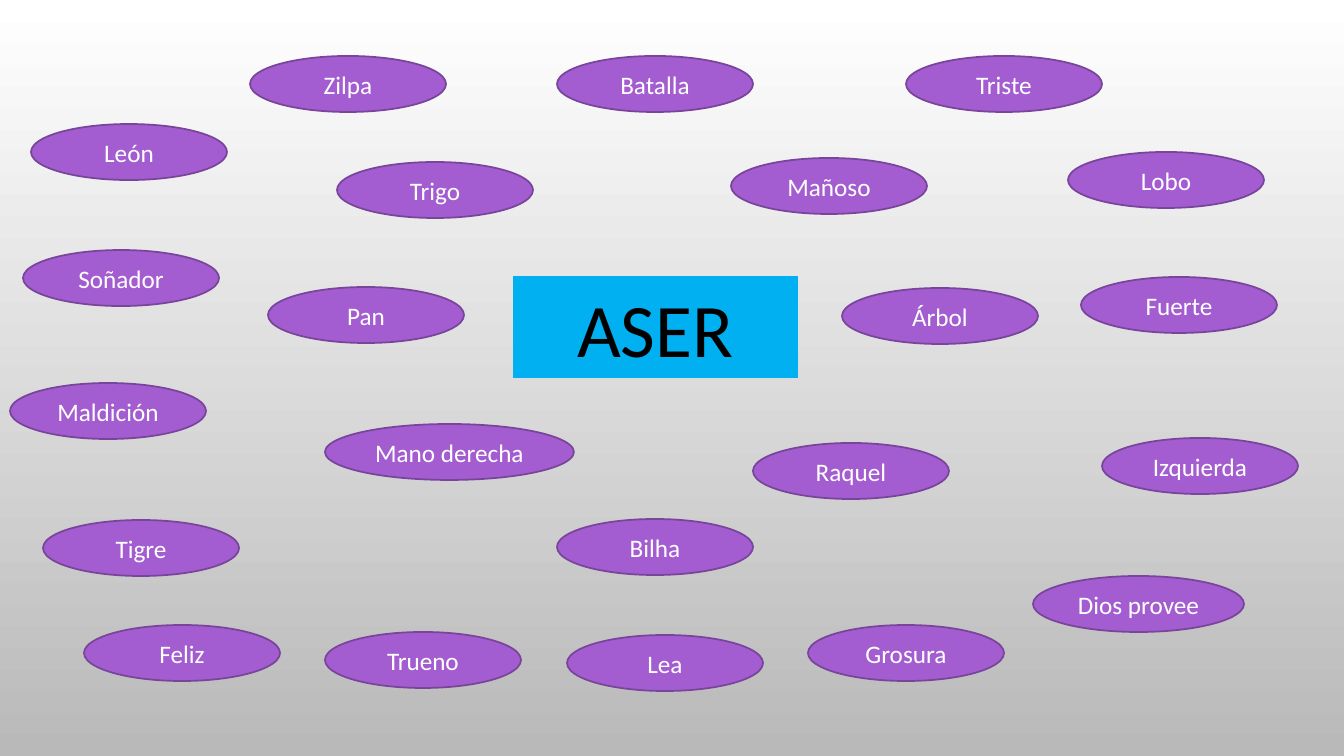
"""Build the ASER word-cloud slide."""
from pptx import Presentation
from pptx.dml.color import RGBColor
from pptx.enum.shapes import MSO_SHAPE
from pptx.enum.text import MSO_ANCHOR, MSO_AUTO_SIZE, PP_ALIGN
from pptx.util import Pt

OVAL = MSO_SHAPE.OVAL
MIDDLE = MSO_ANCHOR.MIDDLE
NO_FIT = MSO_AUTO_SIZE.NONE
CENTER = PP_ALIGN.CENTER

WHITE = RGBColor(0xFF, 0xFF, 0xFF)
GREY = RGBColor(0xB9, 0xB9, 0xB9)
BLACK = RGBColor(0, 0, 0)
BLUE = RGBColor(0x00, 0xB0, 0xF0)
PURPLE = RGBColor(0xA3, 0x5D, 0xD1)
DARK_PURPLE = RGBColor(0x79, 0x45, 0x9B)

TRIBE = "ASER"
TRIBE_BOX = (513, 276, 285, 102)
CLUE_WIDTH, CLUE_HEIGHT = 196, 56
WIDE_CLUES = {"Dios provee": 211, "Mano derecha": 249}
CLUES = [
    ("Zilpa", 250, 56), ("Batalla", 557, 56), ("Triste", 906, 56),
    ("Lobo", 1068, 152), ("Fuerte", 1081, 277), ("Izquierda", 1102, 438),
    ("Dios provee", 1033, 576), ("Grosura", 808, 625), ("Lea", 567, 635),
    ("Trueno", 325, 632), ("Feliz", 84, 625), ("Tigre", 43, 520),
    ("Maldición", 10, 383), ("Soñador", 23, 250), ("León", 31, 124),
    ("Mañoso", 731, 158), ("Trigo", 337, 162), ("Mano derecha", 325, 424),
    ("Raquel", 753, 443), ("Pan", 268, 287), ("Árbol", 842, 288),
    ("Bilha", 557, 519),
]

FRAME = {"word_wrap": True, "auto_size": NO_FIT, "vertical_anchor": MIDDLE}
TRIBE_FONT = {"name": "Calibri", "size": Pt(54)}
CLUE_FONT = {"name": "Calibri", "size": Pt(18)}


def px(length):
    """Turn px into EMU."""
    return round(length * 914400 / 100.8)


def set_all(target, values):
    """Set every attribute named in values."""
    for name, value in values.items():
        setattr(target, name, value)


def write(shape, words, font_format, ink, fill):
    """Fill the shape and put its centred words in it."""
    shape.fill.solid()
    shape.fill.fore_color.rgb = fill
    frame = shape.text_frame
    frame.text = words
    set_all(frame, FRAME)
    paragraph = frame.paragraphs[0]
    paragraph.alignment = CENTER
    set_all(paragraph.font, font_format)
    paragraph.font.color.rgb = ink


def add_clue(slide, word, left, top):
    """Add one purple oval."""
    width = WIDE_CLUES.get(word, CLUE_WIDTH)
    clue = slide.shapes.add_shape(OVAL, *map(px, (left, top, width, CLUE_HEIGHT)))
    clue.shadow.inherit = False
    clue.line.color.rgb = DARK_PURPLE
    clue.line.width = Pt(1.25)
    write(clue, word, CLUE_FONT, WHITE, PURPLE)


def main():
    """Build and save the slide."""
    deck = Presentation()
    deck.slide_width, deck.slide_height = px(1344), px(756)
    slide = deck.slides.add_slide(deck.slide_layouts[5])

    backdrop = slide.background.fill
    backdrop.gradient()
    backdrop.gradient_angle = 270
    for stop, position, colour in zip(backdrop.gradient_stops, (0, 1), (WHITE, GREY)):
        stop.position = position
        stop.color.rgb = colour

    tribe = slide.shapes.title
    set_all(tribe, dict(zip(("left", "top", "width", "height"), map(px, TRIBE_BOX))))
    write(tribe, TRIBE, TRIBE_FONT, BLACK, BLUE)

    for clue in CLUES:
        add_clue(slide, *clue)
    deck.save("out.pptx")


if __name__ == "__main__":
    main()
